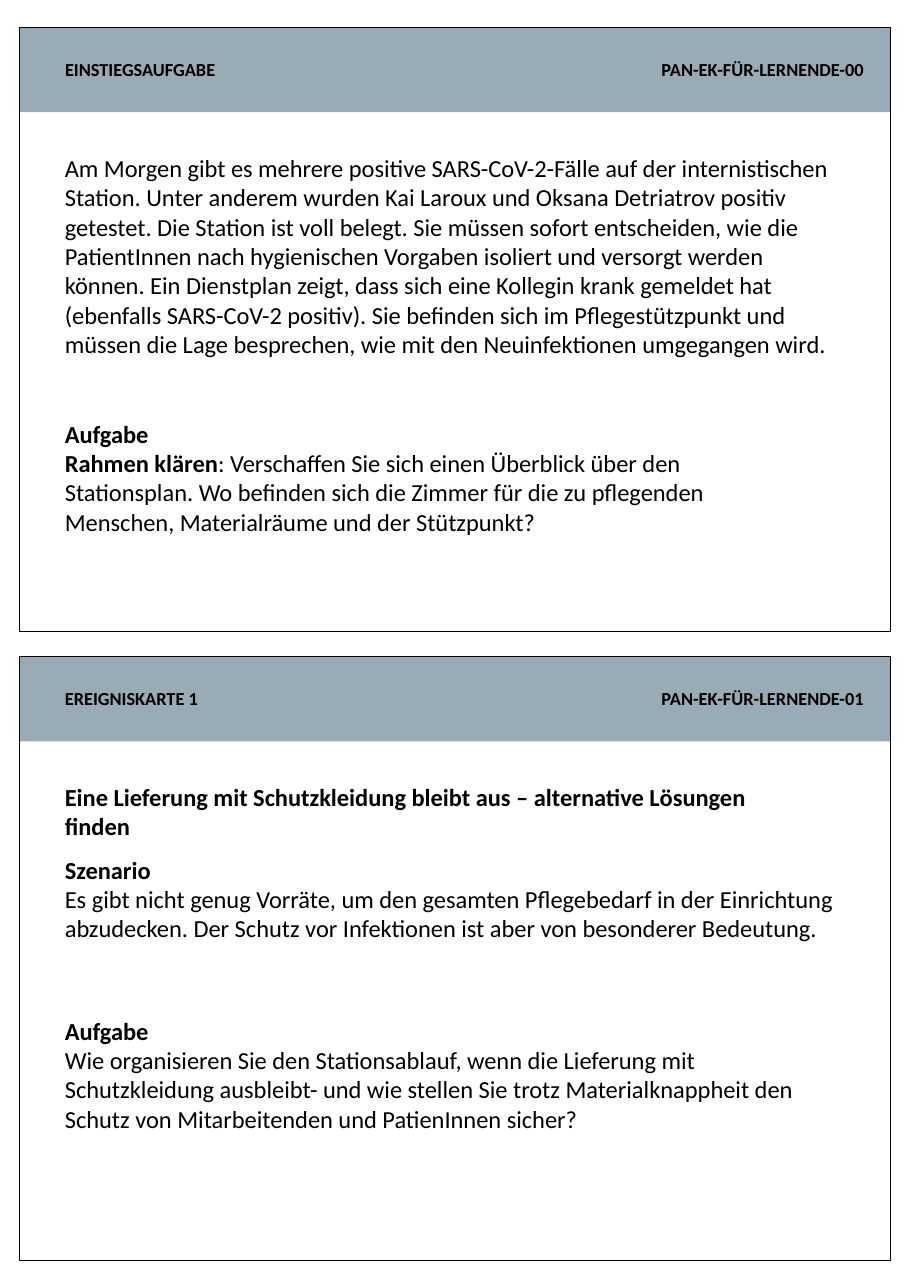
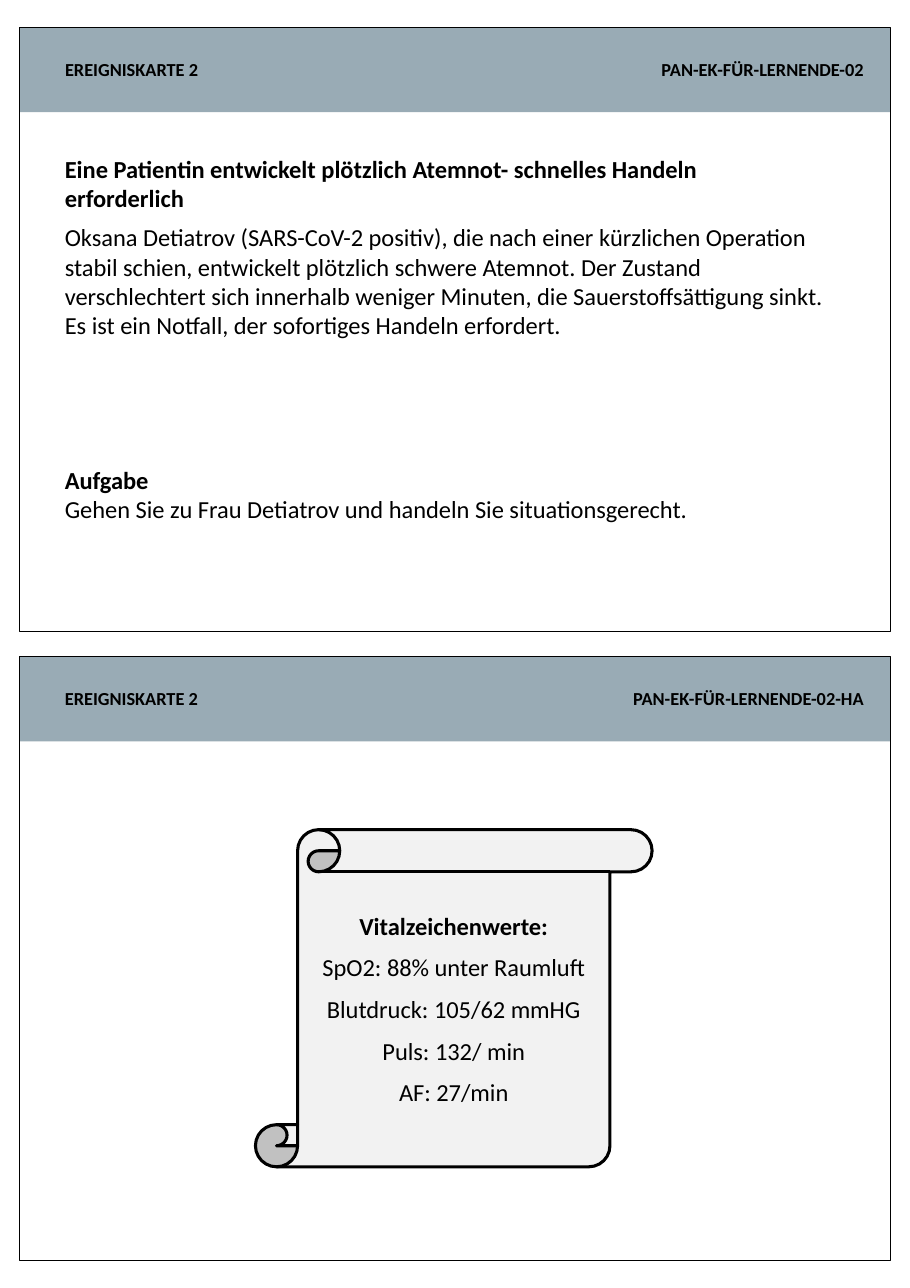
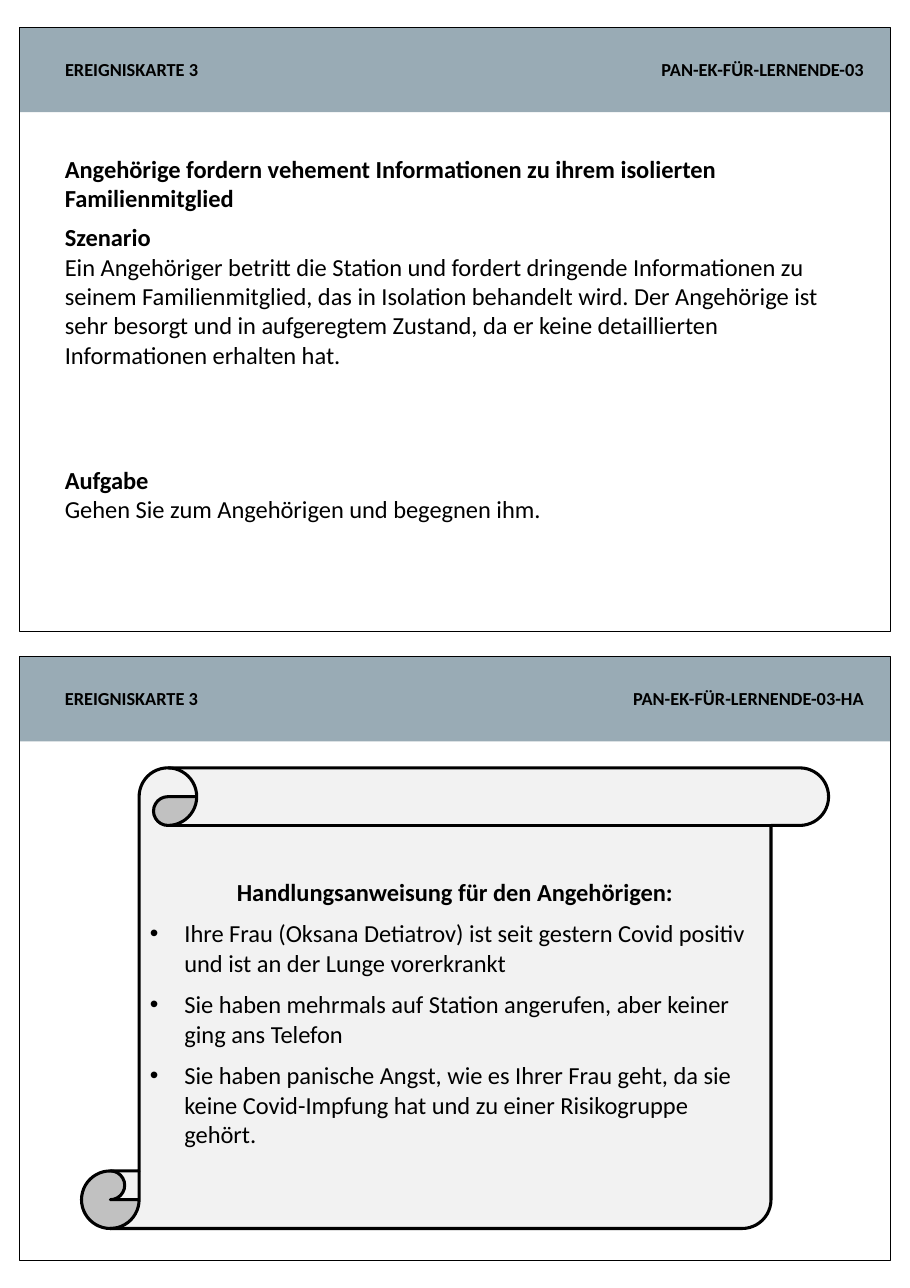
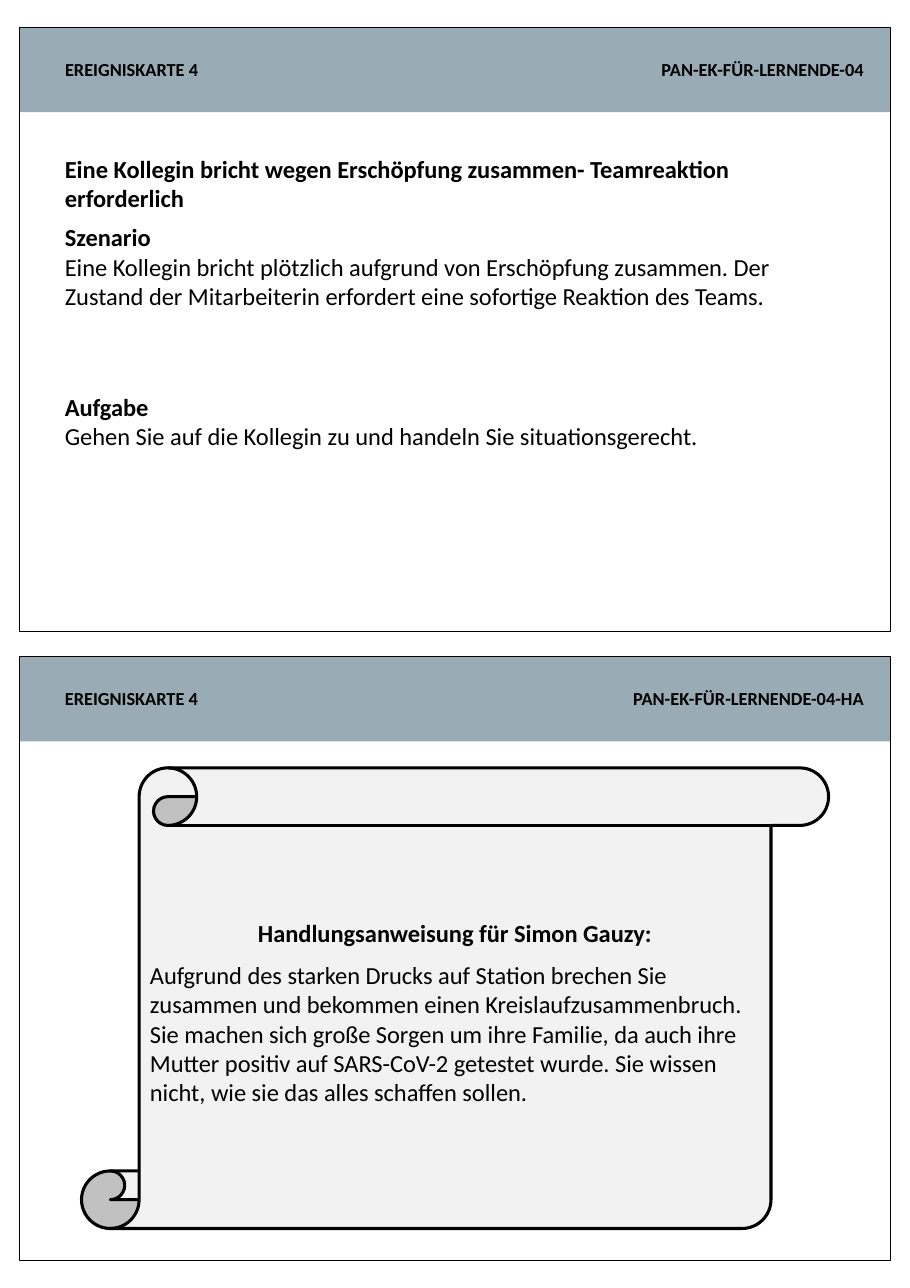
from dataclasses import dataclass
from typing import Optional

from lxml import etree
from pptx import Presentation
from pptx.dml.color import RGBColor
from pptx.enum import shapes, text
from pptx.oxml.ns import qn
from pptx.util import Pt

# Shared look, all lengths in points
FONT = "Calibri"
BLACK, BAND, PAPER = "000000", "99ABB5", "F2F2F2"
SLIDE_WIDTH, SLIDE_HEIGHT = 594.72, 841.68
CARD_LEFT, CARD_TOP, CARD_WIDTH, CARD_HEIGHT = 13, 18, 568.8, 394.5
CARD_STEP, BAND_HEIGHT = 411.1, 55.4
TEXT_LEFT, NARROW, WIDE = 35.3, 500.4, 522
CODE_LEFT, CODE_WIDTH = 333.4, 238.3
LABEL_OFFSET, LABEL_HEIGHT, LABEL_SIZE = 16.5, 21.8, 12
BODY_SIZE, LINE_HEIGHT, INSETS = 16, 19.44, 7.2
SCROLL_GAP, BULLET_INDENT = 8, 22.5
LEFT, CENTER, RIGHT = text.PP_ALIGN.LEFT, text.PP_ALIGN.CENTER, text.PP_ALIGN.RIGHT


@dataclass
class Line:
    text: str
    bold: bool = False
    lead: str = ""
    align: text.PP_ALIGN = LEFT
    bullet: bool = False


@dataclass
class Block:
    top: float
    rows: int
    lines: list[Line]
    width: float = NARROW


@dataclass
class Scroll:
    left: float
    top: float
    width: float
    height: float
    lines: list[Line]


@dataclass
class Page:
    labels: tuple[str, str]
    codes: tuple[str, str]
    blocks: list[Block]
    scroll: Optional[Scroll] = None


def colour(value: str) -> RGBColor:
    return RGBColor.from_string(value)


def place(shape, left: float, top: float, width: float, height: float) -> None:
    shape.left, shape.top = Pt(left), Pt(top)
    shape.width, shape.height = Pt(width), Pt(height)


def add_preset(slide, preset, left: float, top: float, width: float, height: float,
               fill: str = "", line_width: float = 0):
    shape = slide.shapes.add_shape(preset, Pt(left), Pt(top), Pt(width), Pt(height))
    shape.shadow.inherit = False
    if fill:
        shape.fill.solid()
        shape.fill.fore_color.rgb = colour(fill)
    else:
        shape.fill.background()
    if line_width:
        shape.line.color.rgb = colour(BLACK)
        shape.line.width = Pt(line_width)
    else:
        shape.line.fill.background()
    return shape


def add_bullet(paragraph) -> None:
    properties = paragraph._p.get_or_add_pPr()
    properties.set("marL", str(Pt(BULLET_INDENT)))
    properties.set("indent", str(-Pt(BULLET_INDENT)))
    etree.SubElement(properties, qn("a:buFont")).set("typeface", "Arial")
    etree.SubElement(properties, qn("a:buChar")).set("char", "•")


def write(shape, lines: list[Line], size: float = BODY_SIZE, gap: float = 0) -> None:
    frame = shape.text_frame
    frame.word_wrap = True
    for index, line in enumerate(lines):
        paragraph = frame.add_paragraph() if index else frame.paragraphs[0]
        paragraph.text = line.lead or line.text
        if line.lead:
            paragraph.add_run().text = line.text
        if line.bullet:
            add_bullet(paragraph)
        paragraph.alignment = line.align
        paragraph.space_before = Pt(gap if index else 0)
        for run in paragraph.runs:
            run.font.name = FONT
            run.font.size = Pt(size)
            run.font.color.rgb = colour(BLACK)
            run.font.bold = line.bold
        if line.lead:
            paragraph.runs[0].font.bold = True


def add_text(slide, left: float, top: float, width: float, height: float,
             lines: list[Line], size: float = BODY_SIZE) -> None:
    box = slide.shapes.add_textbox(Pt(left), Pt(top), Pt(width), Pt(height))
    write(box, lines, size)
    box.text_frame.auto_size = text.MSO_AUTO_SIZE.SHAPE_TO_FIT_TEXT


def card_tops() -> list[float]:
    return [CARD_TOP, CARD_TOP + CARD_STEP]


def prepare_layout(layout, slide) -> None:
    """Move two framed cards from the slide to the layout that all slides share."""
    for placeholder in list(layout.placeholders):
        if placeholder.placeholder_format.type == shapes.PP_PLACEHOLDER.TITLE:
            place(placeholder, TEXT_LEFT, CARD_TOP + LABEL_OFFSET, NARROW, LABEL_HEIGHT)
        else:
            layout.shapes.element.remove(placeholder.element)
    rectangle = shapes.MSO_SHAPE.RECTANGLE
    cards = []
    for top in card_tops():
        cards.append(add_preset(slide, rectangle, CARD_LEFT, top, CARD_WIDTH,
                                BAND_HEIGHT, fill=BAND))
        cards.append(add_preset(slide, rectangle, CARD_LEFT, top, CARD_WIDTH,
                                CARD_HEIGHT, line_width=0.75))
    for card in cards:
        layout.shapes.element.append(card.element)


def add_headers(slide, page: Page) -> None:
    for index, top in enumerate(card_tops()):
        label_top = top + LABEL_OFFSET
        label = [Line(page.labels[index], bold=True)]
        code = [Line("PAN-EK-FÜR-LERNENDE-" + page.codes[index], bold=True, align=RIGHT)]
        add_text(slide, CODE_LEFT, label_top, CODE_WIDTH, LABEL_HEIGHT, code, LABEL_SIZE)
        if index:
            add_text(slide, TEXT_LEFT, label_top, NARROW, LABEL_HEIGHT, label, LABEL_SIZE)
        else:
            title = slide.shapes.title
            place(title, TEXT_LEFT, label_top, NARROW, LABEL_HEIGHT)
            write(title, label, LABEL_SIZE)
            title.text_frame.vertical_anchor = text.MSO_ANCHOR.TOP
            title.text_frame.auto_size = text.MSO_AUTO_SIZE.NONE


def add_scroll(slide, scroll: Scroll) -> None:
    shape = add_preset(slide, shapes.MSO_SHAPE.VERTICAL_SCROLL, scroll.left, scroll.top,
                       scroll.width, scroll.height, PAPER, 2)
    write(shape, scroll.lines, gap=SCROLL_GAP)
    shape.text_frame.vertical_anchor = text.MSO_ANCHOR.MIDDLE


def fill_slide(slide, page: Page) -> None:
    add_headers(slide, page)
    for block in page.blocks:
        add_text(slide, TEXT_LEFT, block.top, block.width,
                 INSETS + LINE_HEIGHT * block.rows, block.lines)
    if page.scroll:
        add_scroll(slide, page.scroll)


# Recurring kinds of content
def headline(words: str, top: float = 97.2) -> Block:
    return Block(top, 2, [Line(words, bold=True)])


def section(name: str, words: str, top: float, rows: int,
            width: float = NARROW, lead: str = "") -> Block:
    return Block(top, rows, [Line(name, bold=True), Line(words, lead=lead)], width)


def event_page(number: int, blocks: list[Block], scroll: Scroll) -> Page:
    label, code = f"EREIGNISKARTE {number}", f"{number:02d}"
    return Page((label, label), (code, code + "-HA"), blocks, scroll)


def large_scroll(heading: str, lines: list[Line]) -> Scroll:
    return Scroll(53.3, 501.8, 488.2, 301,
                  [Line(heading, bold=True, align=CENTER)] + lines)


PAGES = [
    Page(("EINSTIEGSAUFGABE", "EREIGNISKARTE 1"), ("00", "01"), [
        Block(96.5, 8, [Line(
            "Am Morgen gibt es mehrere positive SARS-CoV-2-Fälle auf der internistischen "
            "Station. Unter anderem wurden Kai Laroux und Oksana Detriatrov positiv getestet. "
            "Die Station ist voll belegt. Sie müssen sofort entscheiden, wie die PatientInnen "
            "nach hygienischen Vorgaben isoliert und versorgt werden können. Ein Dienstplan "
            "zeigt, dass sich eine Kollegin krank gemeldet hat (ebenfalls SARS-CoV-2 positiv). "
            "Sie befinden sich im Pflegestützpunkt und müssen die Lage besprechen, wie mit den "
            "Neuinfektionen umgegangen wird.")], WIDE),
        section("Aufgabe",
                ": Verschaffen Sie sich einen Überblick über den Stationsplan. Wo befinden sich "
                "die Zimmer für die zu pflegenden Menschen, Materialräume und der Stützpunkt?",
                270, 5, lead="Rahmen klären"),
        headline("Eine Lieferung mit Schutzkleidung bleibt aus – alternative Lösungen finden",
                 507.6),
        section("Szenario",
                "Es gibt nicht genug Vorräte, um den gesamten Pflegebedarf in der Einrichtung "
                "abzudecken. Der Schutz vor Infektionen ist aber von besonderer Bedeutung.",
                555, 3, WIDE),
        section("Aufgabe",
                "Wie organisieren Sie den Stationsablauf, wenn die Lieferung mit Schutzkleidung "
                "ausbleibt- und wie stellen Sie trotz Materialknappheit den Schutz von "
                "Mitarbeitenden und PatienInnen sicher?", 660.2, 6),
    ]),
    event_page(2, [
        headline("Eine Patientin entwickelt plötzlich Atemnot- schnelles Handeln erforderlich"),
        Block(141.8, 4, [Line(
            "Oksana Detiatrov (SARS-CoV-2 positiv), die nach einer kürzlichen Operation stabil "
            "schien, entwickelt plötzlich schwere Atemnot. Der Zustand verschlechtert sich "
            "innerhalb weniger Minuten, die Sauerstoffsättigung sinkt. Es ist ein Notfall, der "
            "sofortiges Handeln erfordert.")], WIDE),
        section("Aufgabe", "Gehen Sie zu Frau Detiatrov und handeln Sie situationsgerecht.",
                300.2, 3),
    ], Scroll(167, 542.2, 259.2, 220.3, [
        Line("Vitalzeichenwerte:", bold=True, align=CENTER),
        Line("SpO2: 88% unter Raumluft", align=CENTER),
        Line("Blutdruck: 105/62 mmHG", align=CENTER),
        Line("Puls: 132/ min", align=CENTER),
        Line("AF: 27/min", align=CENTER),
    ])),
    event_page(3, [
        headline("Angehörige fordern vehement Informationen zu ihrem isolierten "
                 "Familienmitglied"),
        section("Szenario",
                "Ein Angehöriger betritt die Station und fordert dringende Informationen zu "
                "seinem Familienmitglied, das in Isolation behandelt wird. Der Angehörige ist "
                "sehr besorgt und in aufgeregtem Zustand, da er keine detaillierten "
                "Informationen erhalten hat.", 141.8, 5, WIDE),
        section("Aufgabe", "Gehen Sie zum Angehörigen und begegnen ihm.", 300.2, 3),
    ], large_scroll("Handlungsanweisung für den Angehörigen:", [
        Line("Ihre Frau (Oksana Detiatrov) ist seit gestern Covid positiv und ist an der Lunge "
             "vorerkrankt", bullet=True),
        Line("Sie haben mehrmals auf Station angerufen, aber keiner ging ans Telefon",
             bullet=True),
        Line("Sie haben panische Angst, wie es Ihrer Frau geht, da sie keine Covid-Impfung hat "
             "und zu einer Risikogruppe gehört.", bullet=True),
    ])),
    event_page(4, [
        headline("Eine Kollegin bricht wegen Erschöpfung zusammen- Teamreaktion erforderlich"),
        section("Szenario",
                "Eine Kollegin bricht plötzlich aufgrund von Erschöpfung zusammen. Der Zustand "
                "der Mitarbeiterin erfordert eine sofortige Reaktion des Teams.",
                141.8, 3, WIDE),
        section("Aufgabe", "Gehen Sie auf die Kollegin zu und handeln Sie situationsgerecht.",
                252.7, 3),
    ], large_scroll("Handlungsanweisung für Simon Gauzy:", [
        Line("Aufgrund des starken Drucks auf Station brechen Sie zusammen und bekommen einen "
             "Kreislaufzusammenbruch. Sie machen sich große Sorgen um ihre Familie, da auch "
             "ihre Mutter positiv auf SARS-CoV-2 getestet wurde. Sie wissen nicht, wie sie das "
             "alles schaffen sollen."),
    ])),
]


def main() -> None:
    presentation = Presentation()
    presentation.slide_width, presentation.slide_height = Pt(SLIDE_WIDTH), Pt(SLIDE_HEIGHT)
    layout = presentation.slide_layouts[5]  # title only
    slides = [presentation.slides.add_slide(layout) for _ in PAGES]
    prepare_layout(layout, slides[0])
    for slide, page in zip(slides, PAGES):
        fill_slide(slide, page)
    presentation.save("out.pptx")


if __name__ == "__main__":
    main()
